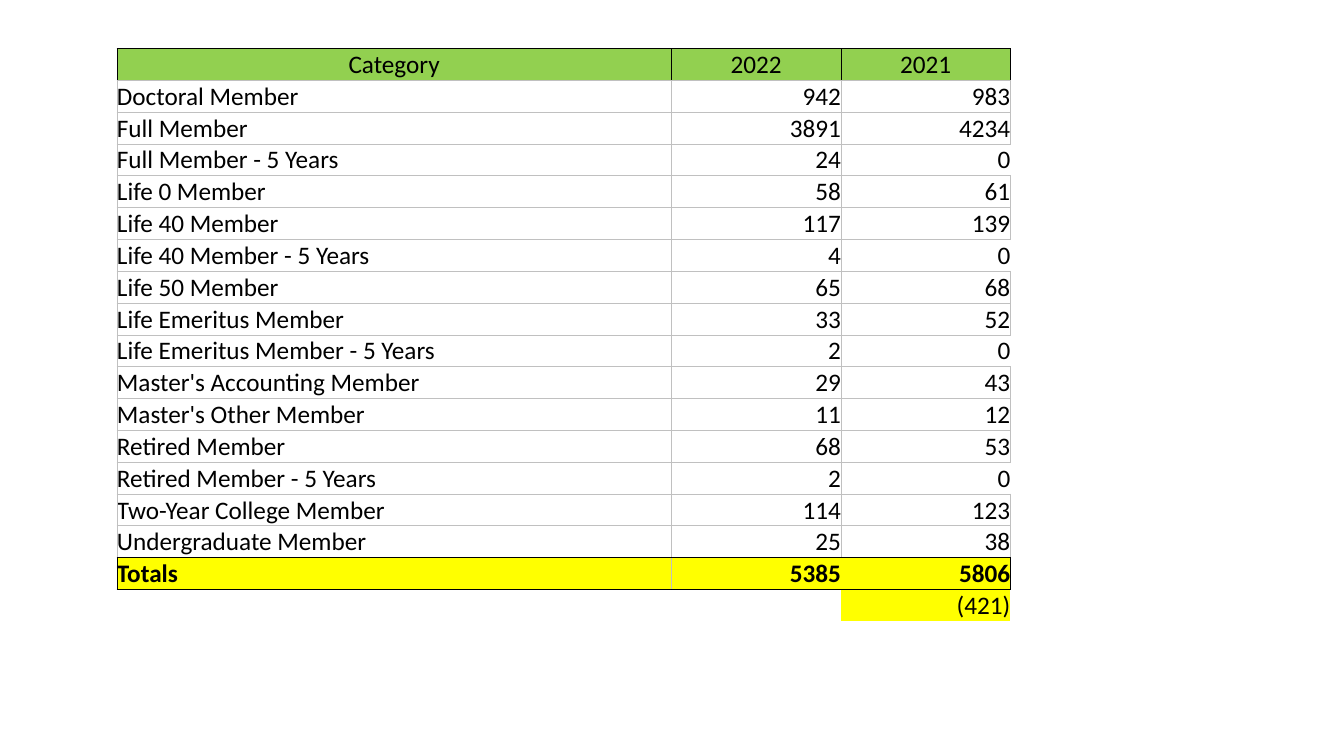
import pptx
import pptx.util
import pptx.dml.color
import pptx.enum.text
import pptx.oxml

Inches = pptx.util.Inches
Align = pptx.enum.text.PP_ALIGN
NS = 'xmlns:a="http://schemas.openxmlformats.org/drawingml/2006/main"'
COLORS = {"black": "000000", "grey": "C0C0C0", "green": "92D050", "yellow": "FFFF00"}


def write(text, cell, align=Align.LEFT, bold=False):
    para = cell.text_frame.paragraphs[0]
    para.alignment = align
    run = para.add_run()
    run.text = text
    run.font.name = "Calibri"
    run.font.size = pptx.util.Pt(18)
    run.font.bold = bold
    run.font.color.rgb = pptx.dml.color.RGBColor.from_string(COLORS["black"])


def style(cell, edges, fill=None):
    """Draw the four edges, then the fill; an edge without a colour is left open."""
    props = cell._tc.get_or_add_tcPr()
    for side in "LRTB":
        name = edges.get(side)
        paint = f'<a:solidFill><a:srgbClr val="{COLORS[name]}"/></a:solidFill>' if name else "<a:noFill/>"
        props.append(pptx.oxml.parse_xml(f'<a:ln{side} {NS} w="6350">{paint}</a:ln{side}>'))
    if fill:
        cell.fill.solid()
        cell.fill.fore_color.rgb = pptx.dml.color.RGBColor.from_string(COLORS[fill])
    else:
        cell.fill.background()


ROWS = [
    ("Category", "2022", "2021"),
    ("Doctoral Member", "942", "983"),
    ("Full Member", "3891", "4234"),
    ("Full Member - 5 Years", "24", "0"),
    ("Life 0 Member", "58", "61"),
    ("Life 40 Member", "117", "139"),
    ("Life 40 Member - 5 Years", "4", "0"),
    ("Life 50 Member", "65", "68"),
    ("Life Emeritus Member", "33", "52"),
    ("Life Emeritus Member - 5 Years", "2", "0"),
    ("Master's Accounting Member", "29", "43"),
    ("Master's Other Member", "11", "12"),
    ("Retired Member", "68", "53"),
    ("Retired Member - 5 Years", "2", "0"),
    ("Two-Year College Member", "114", "123"),
    ("Undergraduate Member", "25", "38"),
    ("Totals", "5385", "5806"),
    ("", "", "(421)"),
]
TOTAL = len(ROWS) - 2

# Slide
deck = pptx.Presentation()
deck.slide_width, deck.slide_height = Inches(13.33), Inches(7.5)
slide = deck.slides.add_slide(deck.slide_layouts[6])

# Table frame
frame = slide.shapes.add_table(len(ROWS), 3, Inches(1.16), Inches(0.48), Inches(8.86), Inches(5.69))
table = frame.table
table.first_row = table.horz_banding = False
for column, width in zip(table.columns, (5.5, 1.68, 1.68)):
    column.width = Inches(width)

# Cells
for r, row in enumerate(ROWS):
    for c, text in enumerate(row):
        cell = table.cell(r, c)
        cell.margin_left = cell.margin_right = cell.margin_top = cell.margin_bottom = 0
        cell.vertical_anchor = pptx.enum.text.MSO_ANCHOR.BOTTOM

        # Edges and fill by kind of row
        edges, fill = dict.fromkeys("LRTB", "grey"), None
        if r == 0:
            edges, fill = dict.fromkeys("LRT", "black") | {"B": "grey"}, "green"
        elif r == TOTAL:
            sides = ({"L": "black", "R": "grey"}, {"L": "grey"}, {"R": "black"})[c]
            edges, fill = {"T": "black", "B": "black"} | sides, "yellow"
        elif r > TOTAL:
            edges, fill = {"T": "black"}, "yellow" if text else None
        elif r == TOTAL - 1:
            edges["B"] = "black"
        elif text == "0":
            del edges["R"]
        style(cell, edges, fill)

        if text:
            align = Align.CENTER if r == 0 else Align.RIGHT if c else Align.LEFT
            write(text, cell, align=align, bold=r == TOTAL)

deck.save("out.pptx")
